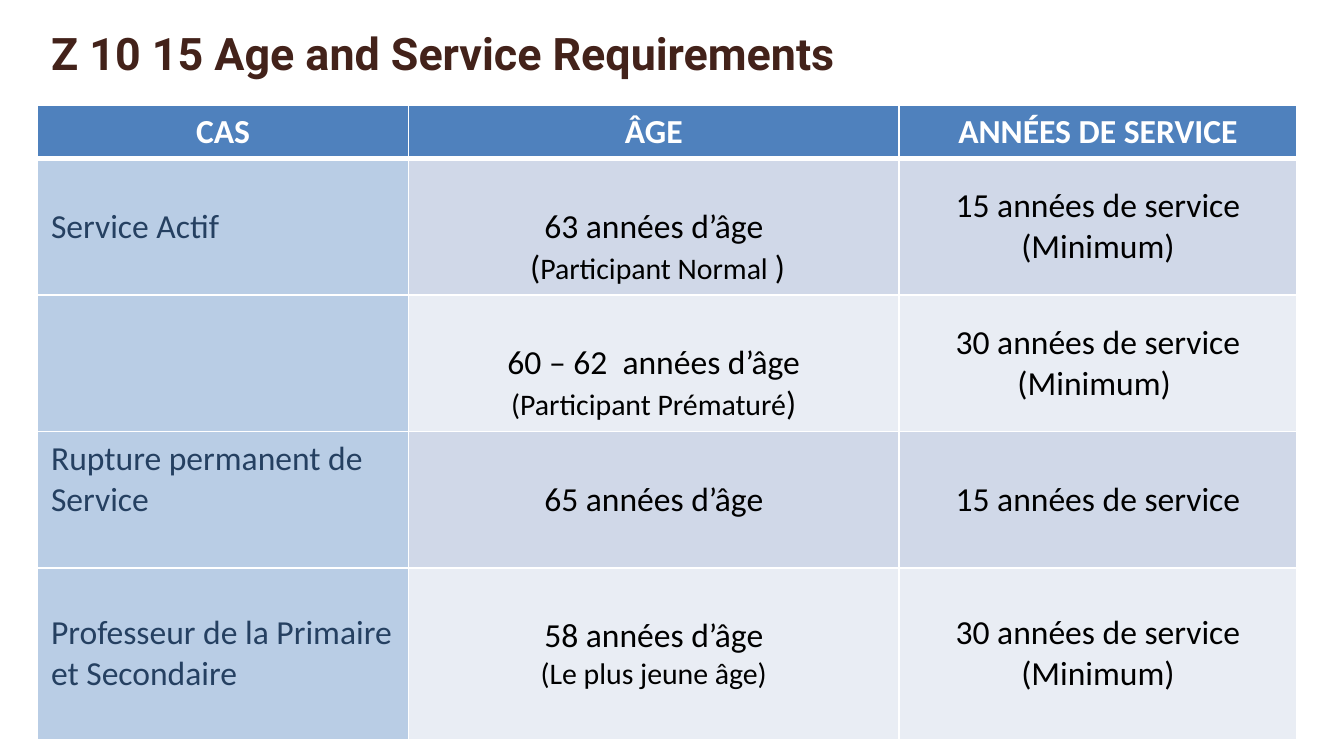
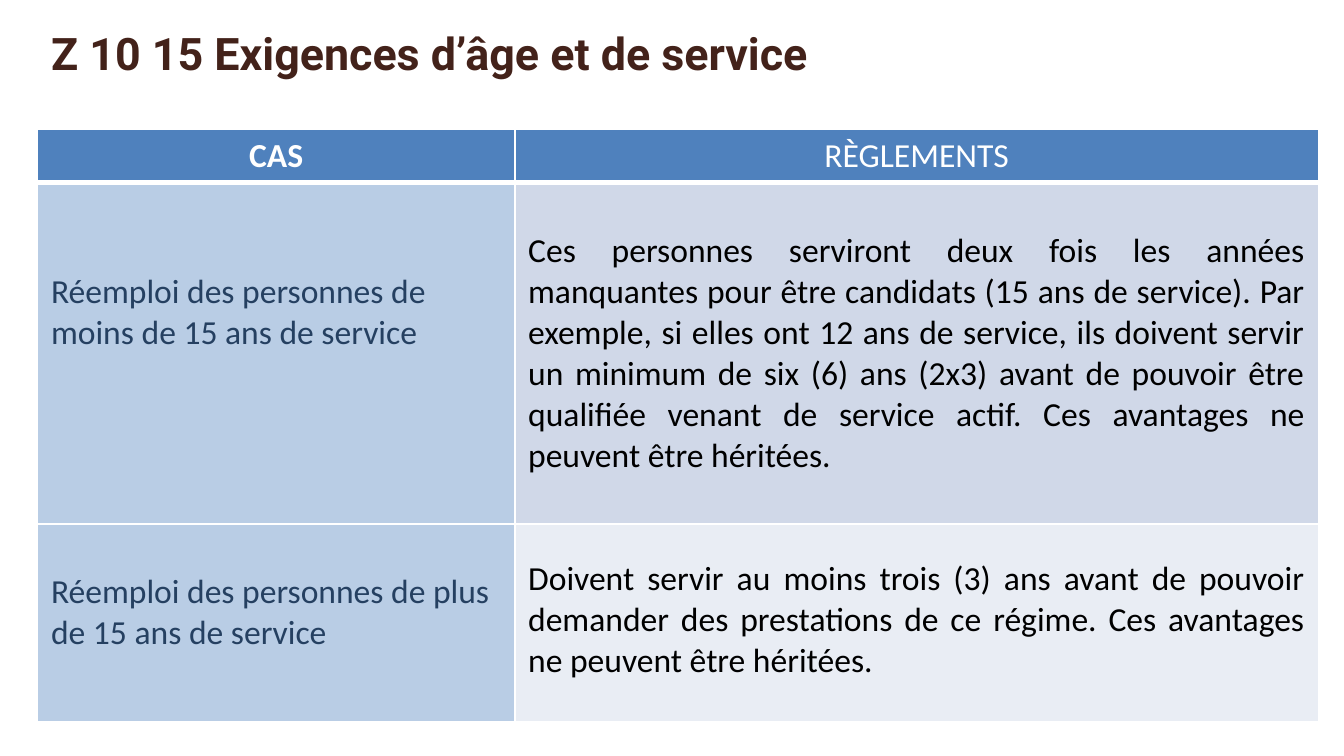
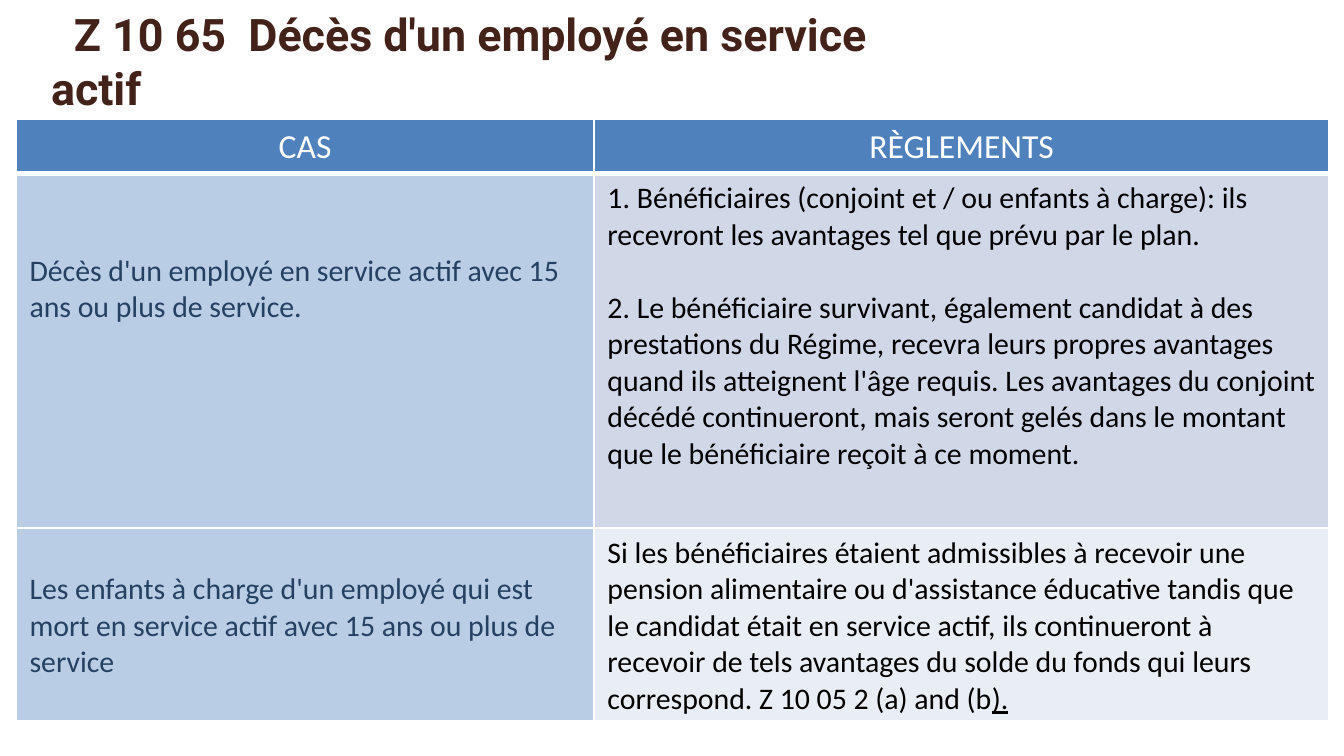
from dataclasses import dataclass

from lxml.etree import SubElement
from pptx import Presentation
from pptx.dml.color import RGBColor
from pptx.enum.text import MSO_ANCHOR, MSO_AUTO_SIZE, PP_ALIGN
from pptx.oxml.ns import qn
from pptx.util import Inches, Pt

COLUMNS, ROWS = 100, 56.25


@dataclass(frozen=True)
class Theme:
    title_font: str = "Roboto"
    body_font: str = "Calibri"
    title_size: int = 24
    body_size: int = 18
    small_size: int = 16
    title_color: str = "43221A"
    header_color: str = "FFFFFF"
    case_color: str = "254061"
    rule_color: str = "000000"
    border_color: str = "FFFFFF"
    header_fill: str = "4F81BD"
    case_fill: str = "B9CDE5"
    band_fills: tuple = ("D0D8E8", "E9EDF4")
    border: int = 1
    header_border: int = 3
    line_height: float = 1.22


def text(*paragraphs, **options):
    return {"paragraphs": paragraphs, **options}


def write_text(frame, paragraphs, font, size, color, bold=False,
               align=PP_ALIGN.LEFT, gap=0):
    frame.word_wrap = True
    for number, spans in enumerate(paragraphs):
        para = frame.add_paragraph() if number else frame.paragraphs[0]
        para.alignment = align
        para.space_before = Pt(gap if number else 0)
        for item in [spans] if isinstance(spans, str) else spans:
            content, changes = (item, {}) if isinstance(item, str) else item
            span = para.add_run()
            span.text = content
            span.font.name = font
            span.font.size = Pt(changes.get("size", size))
            span.font.color.rgb = RGBColor.from_string(color)
            span.font.bold = bold
            if "underline" in changes:
                span.font.underline = changes["underline"]


class DeckBuilder:
    def __init__(self, theme):
        self.theme = theme
        self.deck = Presentation()
        self.deck.slide_width = Inches(10)
        self.deck.slide_height = Inches(5.625)
        self.page = None

    def across(self, columns):
        return round(self.deck.slide_width * columns / COLUMNS)

    def down(self, rows):
        return round(self.deck.slide_height * rows / ROWS)

    def start_page(self):
        self.page = self.deck.slides.add_slide(self.deck.slide_layouts[5])

    def title(self, content, top=1.4, width=67.7, height=5, indent=0):
        theme = self.theme
        box = self.page.shapes.title
        box.left, box.top = self.across(2.8), self.down(top)
        box.width, box.height = self.across(width), self.down(height)
        frame = box.text_frame
        frame.vertical_anchor = MSO_ANCHOR.TOP
        frame.auto_size = MSO_AUTO_SIZE.SHAPE_TO_FIT_TEXT
        write_text(frame, [content], theme.title_font, theme.title_size,
                   theme.title_color, bold=True)
        if indent:
            properties = frame.paragraphs[0]._p.get_or_add_pPr()
            properties.set("indent", str(self.across(indent)))

    def borders(self, cell, bottom):
        properties = cell._tc.get_or_add_tcPr()
        for side in "LRTB":
            width = bottom if side == "B" else self.theme.border
            line = SubElement(properties, qn(f"a:ln{side}"), w=str(Pt(width)))
            fill = SubElement(line, qn("a:solidFill"))
            SubElement(fill, qn("a:srgbClr"), val=self.theme.border_color)

    def cell(self, cell, entry, fill, color, bottom, align=PP_ALIGN.LEFT,
             bold=False, size=None):
        theme = self.theme
        self.borders(cell, bottom)
        cell.fill.solid()
        cell.fill.fore_color.rgb = RGBColor.from_string(fill)
        cell.vertical_anchor = entry.get("anchor", MSO_ANCHOR.TOP)
        cell.margin_top = Inches(0.05) + Pt(entry.get("lead", 0) * theme.line_height)
        write_text(cell.text_frame, entry["paragraphs"], theme.body_font,
                   size or theme.body_size, color, entry.get("bold", bold),
                   align, entry.get("gap", 0))

    def table(self, left, top, widths, heights, header, body, align, size=None):
        theme = self.theme
        table = self.page.shapes.add_table(
            len(heights), len(widths), self.across(left), self.down(top),
            self.across(sum(widths)), self.down(sum(heights))).table
        for column, width in zip(table.columns, widths):
            column.width = self.across(width)
        for row, height in zip(table.rows, heights):
            row.height = self.down(height)
        for column, entry in enumerate(header):
            self.cell(table.cell(0, column), entry, theme.header_fill,
                      theme.header_color, theme.header_border, PP_ALIGN.CENTER)
        for row, entries in enumerate(body):
            band = theme.band_fills[row % len(theme.band_fills)]
            for column, entry in enumerate(entries):
                rule = column > 0
                self.cell(table.cell(row + 1, column), entry,
                          band if rule else theme.case_fill,
                          theme.rule_color if rule else theme.case_color,
                          theme.border, align if rule else PP_ALIGN.LEFT,
                          size=size)


def age_page(builder):
    theme = builder.theme
    small = {"size": theme.small_size}
    lead = theme.body_size
    middle = MSO_ANCHOR.MIDDLE
    builder.start_page()
    builder.title("Z 10 15 Age and Service Requirements")
    builder.table(
        2.8, 7.8, [27.6, 36.5, 29.6], [4, 10.15, 10.15, 10.15, 12.8],
        [text(name, bold=True) for name in ("CAS", "ÂGE", "ANNÉES DE SERVICE")],
        [
            [text("Service Actif", anchor=middle),
             text("63 années d’âge",
                  [" (", ("Participant Normal ", small), ")"], lead=lead),
             text("15 années de service", "(Minimum)", anchor=middle)],
            [text(),
             text("60 – 62  années d’âge",
                  [("(Participant Prématuré", small), ")"], lead=lead),
             text("30 années de service (Minimum) ", anchor=middle)],
            [text("Rupture permanent de Service"),
             text("65 années d’âge", lead=lead),
             text("15 années de service", anchor=middle)],
            [text("Professeur de la Primaire et Secondaire", anchor=middle),
             text("58 années d’âge", [("(Le plus jeune âge)", small)], lead=lead),
             text("30 années de service (Minimum)", anchor=middle)],
        ],
        PP_ALIGN.CENTER)


def reemployment_page(builder):
    lead = builder.theme.body_size
    builder.start_page()
    builder.title("Z 10 15 Exigences d’âge et de service", width=69.3, height=9.1)
    builder.table(
        2.8, 9.6, [35.5, 59.8], [4, 25.4, 14.7],
        [text("CAS", bold=True), text("RÈGLEMENTS")],
        [
            [text("Réemploi des personnes de moins de 15 ans de service",
                  lead=2 * lead),
             text("Ces personnes serviront deux fois les années manquantes pour "
                  "être candidats (15 ans de service). Par exemple, si elles ont "
                  "12 ans de service, ils doivent servir un minimum de six (6) ans "
                  "(2x3) avant de pouvoir être qualifiée venant de service actif. "
                  "Ces avantages ne peuvent être héritées.", lead=lead)],
            [text("Réemploi des personnes de plus de 15 ans de service", lead=lead),
             text("Doivent servir au moins trois (3) ans avant de pouvoir demander "
                  "des prestations de ce régime. Ces avantages ne peuvent être "
                  "héritées.", lead=12)],
        ],
        PP_ALIGN.JUSTIFY)


def death_page(builder):
    theme = builder.theme
    lead = theme.small_size
    builder.start_page()
    builder.title("Z 10 65  Décès d'un employé en service actif",
                  top=0, width=66.1, height=9.1, indent=1.7)
    builder.table(
        1.2, 8.9, [43, 54.7], [4, 26.4, 14.3],
        [text("CAS"), text("RÈGLEMENTS")],
        [
            [text("Décès d'un employé en service actif avec 15 ans ou plus de "
                  "service.", lead=2 * lead),
             text("1. Bénéficiaires (conjoint et / ou enfants à charge): ils "
                  "recevront les avantages tel que prévu par le plan.",
                  "2. Le bénéficiaire survivant, également candidat à des "
                  "prestations du Régime, recevra leurs propres avantages quand "
                  "ils atteignent l'âge requis. Les avantages du conjoint décédé "
                  "continueront, mais seront gelés dans le montant que le "
                  "bénéficiaire reçoit à ce moment.",
                  gap=lead * theme.line_height)],
            [text("Les enfants à charge d'un employé qui est mort en service actif "
                  "avec 15 ans ou plus de service", lead=lead),
             text(["Si les bénéficiaires étaient admissibles à recevoir une pension "
                   "alimentaire ou d'assistance éducative tandis que le candidat "
                   "était en service actif, ils continueront à recevoir de tels "
                   "avantages du solde du fonds qui leurs correspond. "
                   "Z 10 05 2 (a) and (b", (").", {"underline": True})])],
        ],
        PP_ALIGN.LEFT, size=theme.small_size)


def main():
    builder = DeckBuilder(Theme())
    for build_page in (age_page, reemployment_page, death_page):
        build_page(builder)
    builder.deck.save("out.pptx")


if __name__ == "__main__":
    main()
